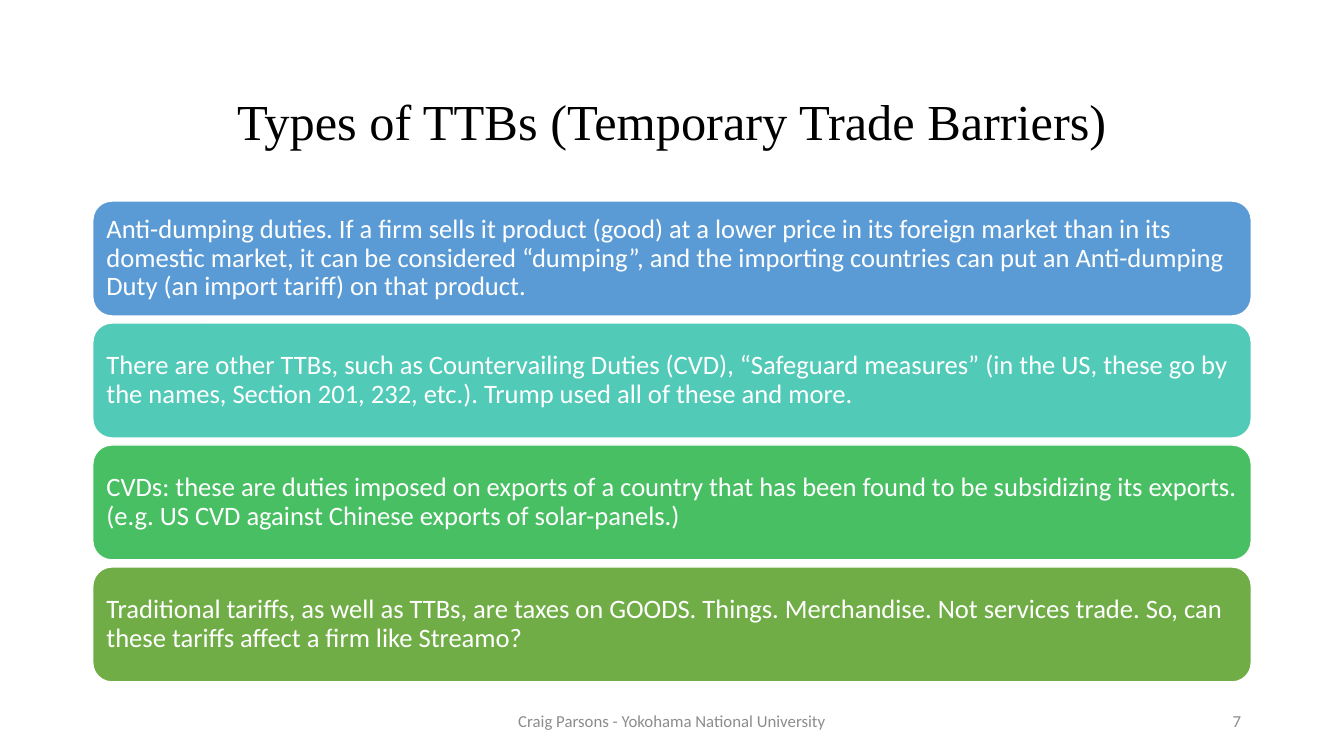
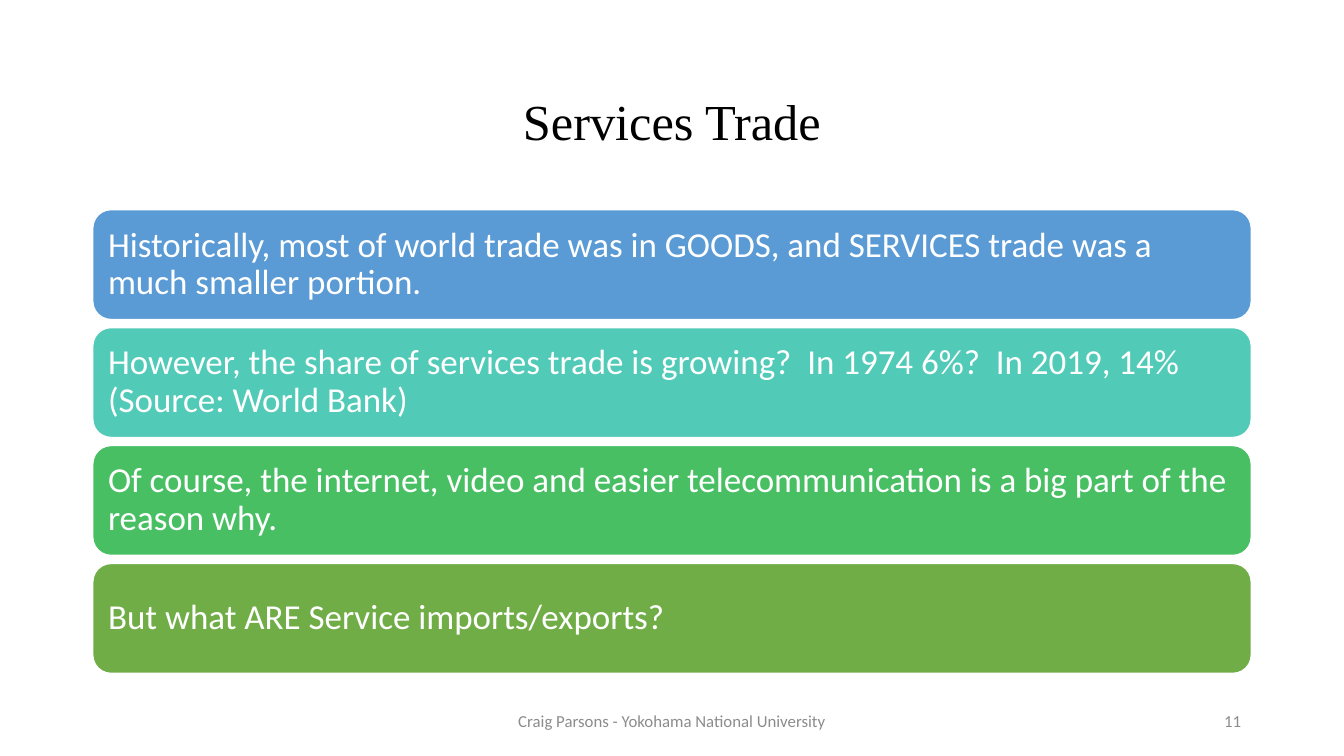
from pptx import Presentation
from pptx.dml.color import RGBColor
from pptx.enum.shapes import MSO_SHAPE
from pptx.enum.text import MSO_ANCHOR, MSO_AUTO_SIZE, PP_ALIGN
from pptx.util import Inches, Pt

COLORS = {
    "title": "000000",
    "footer": "8C8C8C",
    "white": "FFFFFF",
    "blue": "5B9BD5",
    "teal": "52CAB8",
    "green": "49BF64",
    "olive": "70AD47",
}
CARD_FILLS = ("blue", "teal", "green", "olive")
HEADING_FONT = "Times New Roman"
BODY_FONT = "Calibri"

SLIDE_W, SLIDE_H = 13.33, 7.5
MARGIN = 0.92
CONTENT_W = SLIDE_W - 2 * MARGIN
STACK_MIDDLE = 4.38
FOOTER_TOP, FOOTER_H = 6.95, 0.4
FOOTER_W, NUMBER_W = 4.5, 3
FOOTER = "Craig Parsons - Yokohama National University"

SLIDES = [
    {
        "title": "Types of TTBs (Temporary Trade Barriers)",
        "number": 7,
        "card_height": 1.14,
        "gap": 0.07,
        "inset": 0.08,
        "size": 19,
        "cards": [
            "Anti-dumping duties. If a firm sells it product (good) at a lower price in its "
            "foreign market than in its domestic market, it can be considered “dumping”, and "
            "the importing countries can put an Anti-dumping Duty (an import tariff) on that "
            "product.",
            "There are other TTBs, such as Countervailing Duties (CVD), “Safeguard measures” "
            "(in the US, these go by the names, Section 201, 232, etc.). Trump used all of "
            "these and more.",
            "CVDs: these are duties imposed on exports of a country that has been found to be "
            "subsidizing its exports. (e.g. US CVD against Chinese exports of solar-panels.)",
            "Traditional tariffs, as well as TTBs, are taxes on GOODS. Things. Merchandise. "
            "Not services trade. So, can these tariffs affect a firm like Streamo?",
        ],
    },
    {
        "title": "Services Trade",
        "number": 11,
        "card_height": 1.09,
        "gap": 0.08,
        "inset": 0.1,
        "size": 25,
        "cards": [
            "Historically, most of world trade was in GOODS, and SERVICES trade was a much "
            "smaller portion.",
            "However, the share of services trade is growing?  In 1974 6%?  In 2019, 14% "
            "(Source: World Bank)",
            "Of course, the internet, video and easier telecommunication is a big part of the "
            "reason why.",
            "But what ARE Service imports/exports?",
        ],
    },
]


def rgb(name):
    return RGBColor.from_string(COLORS[name])


def box(left, top, width, height):
    return [Inches(length) for length in (left, top, width, height)]


def write(shape, text, font, size, color, align, spacing=1.0):
    frame = shape.text_frame
    frame.text = text
    frame.word_wrap = True
    frame.auto_size = MSO_AUTO_SIZE.NONE
    frame.vertical_anchor = MSO_ANCHOR.MIDDLE
    paragraph = frame.paragraphs[0]
    paragraph.alignment = align
    paragraph.line_spacing = spacing
    for run in paragraph.runs:
        run.font.name = font
        run.font.size = Pt(size)
        run.font.color.rgb = rgb(color)


def set_title(slide, text):
    title = slide.shapes.title
    title.left, title.top, title.width, title.height = box(MARGIN, 0.61, CONTENT_W, 1.24)
    write(title, text, HEADING_FONT, 36, "title", PP_ALIGN.CENTER, 0.9)


def add_footer_text(slide, text, left, width, align):
    footer = slide.shapes.add_textbox(*box(left, FOOTER_TOP, width, FOOTER_H))
    write(footer, text, BODY_FONT, 12, "footer", align)


def add_card(slide, text, fill, top, height, inset, size):
    card = slide.shapes.add_shape(
        MSO_SHAPE.ROUNDED_RECTANGLE, *box(MARGIN, top, CONTENT_W, height)
    )
    card.shadow.inherit = False
    card.fill.solid()
    card.fill.fore_color.rgb = rgb(fill)
    card.line.color.rgb = rgb("white")
    card.line.width = Pt(1)
    frame = card.text_frame
    frame.margin_left = frame.margin_right = Inches(inset)
    frame.margin_top = frame.margin_bottom = Inches(inset)
    write(card, text, BODY_FONT, size, "white", PP_ALIGN.LEFT, 0.9)


def add_card_stack(slide, cards, height, gap, inset, size):
    pitch = height + gap
    first_top = STACK_MIDDLE - (len(cards) * pitch - gap) / 2
    for row, (text, fill) in enumerate(zip(cards, CARD_FILLS)):
        add_card(slide, text, fill, first_top + row * pitch, height, inset, size)


def build_slide(deck, content):
    slide = deck.slides.add_slide(deck.slide_layouts.get_by_name("Title Only"))
    set_title(slide, content["title"])
    add_footer_text(slide, FOOTER, (SLIDE_W - FOOTER_W) / 2, FOOTER_W, PP_ALIGN.CENTER)
    add_footer_text(
        slide, str(content["number"]), SLIDE_W - MARGIN - NUMBER_W, NUMBER_W, PP_ALIGN.RIGHT
    )
    add_card_stack(
        slide,
        content["cards"],
        content["card_height"],
        content["gap"],
        content["inset"],
        content["size"],
    )


def main():
    deck = Presentation()
    deck.slide_width, deck.slide_height = Inches(SLIDE_W), Inches(SLIDE_H)
    for content in SLIDES:
        build_slide(deck, content)
    deck.save("out.pptx")


if __name__ == "__main__":
    main()
